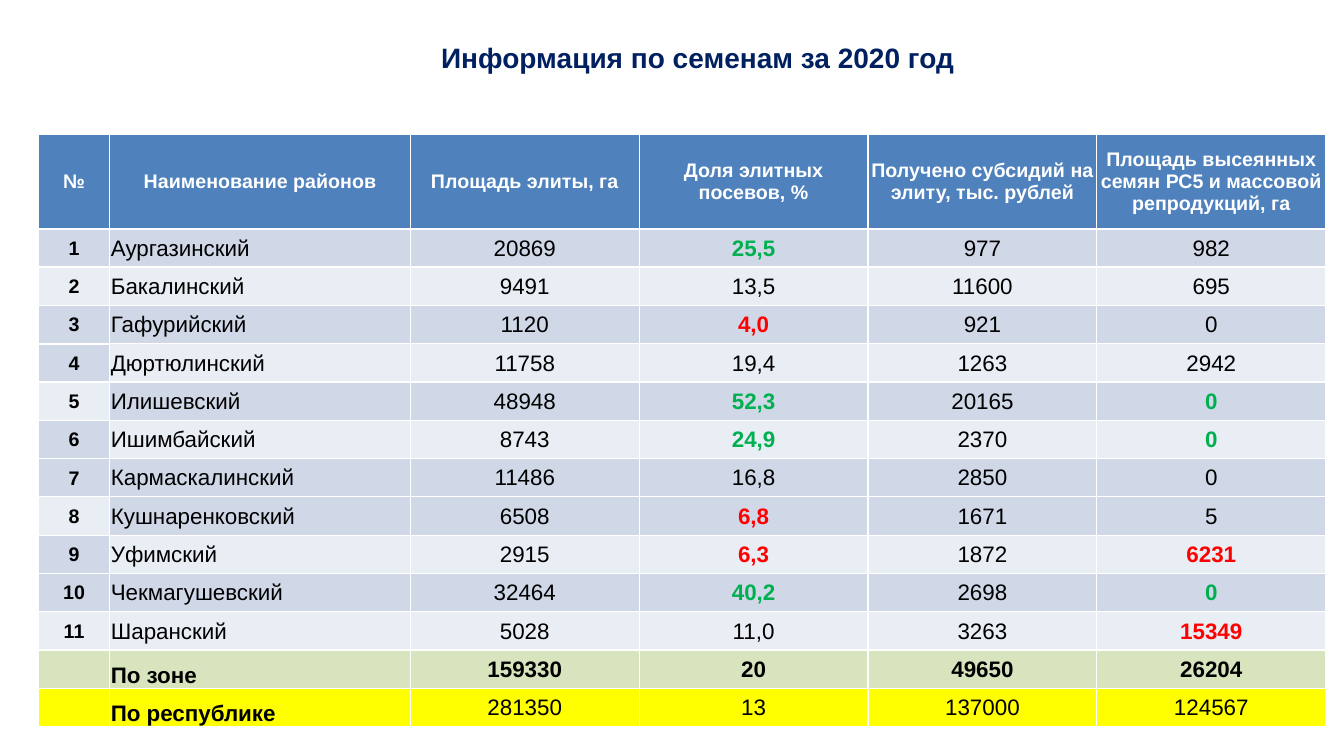
"""Build a slide with a table of seed figures by district for 2020."""
from lxml import etree
from pptx import Presentation
from pptx.dml.color import RGBColor
from pptx.enum.text import MSO_ANCHOR, PP_ALIGN
from pptx.oxml.ns import qn
from pptx.util import Inches, Pt

LEFT, CENTER = PP_ALIGN.LEFT, PP_ALIGN.CENTER
MIDDLE, BOTTOM = MSO_ANCHOR.MIDDLE, MSO_ANCHOR.BOTTOM
WHITE, BLACK, NAVY, BLUE = "FFFFFF", "000000", "002060", "4F81BD"
DARK_BAND, LIGHT_BAND = "D0D8E8", "E9EDF4"
GREEN, RED = "00B050", "FF0000"

HEADERS = [
    "№", "Наименование районов", "Площадь элиты, га", "Доля элитных посевов, %",
    "Получено субсидий на элиту, тыс. рублей",
    "Площадь высеянных семян РС5 и массовой репродукций, га",
]
DISTRICTS = [
    ("Аургазинский", "20869", "25,5", "977", "982"),
    ("Бакалинский", "9491", "13,5", "11600", "695"),
    ("Гафурийский", "1120", "4,0", "921", "0"),
    ("Дюртюлинский", "11758", "19,4", "1263", "2942"),
    ("Илишевский", "48948", "52,3", "20165", "0"),
    ("Ишимбайский", "8743", "24,9", "2370", "0"),
    ("Кармаскалинский", "11486", "16,8", "2850", "0"),
    ("Кушнаренковский", "6508", "6,8", "1671", "5"),
    ("Уфимский", "2915", "6,3", "1872", "6231"),
    ("Чекмагушевский", "32464", "40,2", "2698", "0"),
    ("Шаранский", "5028", "11,0", "3263", "15349"),
]
ZONE = ("", "По зоне", "159330", "20", "49650", "26204")
REPUBLIC = ("", "По республике", "281350", "13", "137000", "124567")
ROWS = [HEADERS]
ROWS += [(str(number), *district) for number, district in enumerate(DISTRICTS, 1)]
ROWS += [ZONE, REPUBLIC]
ZONE_ROW, REPUBLIC_ROW = len(ROWS) - 2, len(ROWS) - 1
TOTAL_FILLS = {ZONE_ROW: "D7E4BD", REPUBLIC_ROW: "FFFF00"}

DARK_NUMBERS = {1, 3, 4, 6, 7, 9, 10}
DARK_ROWS = {1, 3, 5, 7, 8, 10}
THICK_NUMBERS = {3, 6, 9}
MARKS = {(row, 3): GREEN for row in (1, 5, 6, 10)}
MARKS |= {(row, 5): GREEN for row in (5, 6, 10)}
MARKS |= {(row, 3): RED for row in (3, 8, 9)}
MARKS |= {(row, 5): RED for row in (9, 11)}


def rgb(value):
    return RGBColor.from_string(value)


def write(paragraph, text, color, alignment, **formats):
    paragraph.alignment = alignment
    run = paragraph.add_run()
    run.text = text
    run.font.color.rgb = rgb(color)
    for name, value in {"name": "Arial", **formats}.items():
        setattr(run.font, name, value)


presentation = Presentation()
presentation.slide_width = Inches(13.33)
presentation.slide_height = Inches(7.5)
slide = presentation.slides.add_slide(presentation.slide_layouts[6])

title = slide.shapes.add_textbox(Inches(2.42), Inches(0.35), Inches(9), Inches(0.44))
title.text_frame.word_wrap = True
write(title.text_frame.paragraphs[0], "Информация по семенам за 2020 год",
      NAVY, CENTER, size=Pt(20), bold=True)

table = slide.shapes.add_table(
    len(ROWS), len(HEADERS), Inches(0.38), Inches(1.33), Inches(12.77), Inches(5.83)
).table
for index, column in enumerate(table.columns):
    column.width = Inches({0: 0.71, 1: 2.98}.get(index, 2.27))
for index, row in enumerate(table.rows):
    row.height = Inches(0.38 if index else 0.94)

for row_index, values in enumerate(ROWS):
    for column_index, text in enumerate(values):
        cell = table.cell(row_index, column_index)
        is_header, is_total = row_index == 0, row_index in TOTAL_FILLS
        is_number, is_name = column_index == 0, column_index == 1
        mark = MARKS.get((row_index, column_index))

        thick_top = row_index == 1 or is_number and row_index - 1 in THICK_NUMBERS
        thick_bottom = is_header or is_number and row_index in THICK_NUMBERS
        widths = {"a:lnL": 1, "a:lnR": 1, "a:lnT": 1.5 if thick_top else 1,
                  "a:lnB": 1.5 if thick_bottom else 1}
        properties = cell._tc.get_or_add_tcPr()
        for tag, width in widths.items():
            line = etree.SubElement(properties, qn(tag), w=str(Pt(width)))
            solid = etree.SubElement(line, qn("a:solidFill"))
            etree.SubElement(solid, qn("a:srgbClr"), val=WHITE)

        dark_rows = DARK_NUMBERS if is_number else DARK_ROWS
        band = DARK_BAND if row_index in dark_rows else LIGHT_BAND
        cell.fill.solid()
        cell.fill.fore_color.rgb = rgb(BLUE if is_header else TOTAL_FILLS.get(row_index, band))

        cell_format = {
            "margin_left": Inches(0.01), "margin_right": Inches(0.01),
            "margin_top": Inches(0.01), "margin_bottom": 0,
            "vertical_anchor": BOTTOM if is_total and is_name else MIDDLE,
        }
        for name, value in cell_format.items():
            setattr(cell, name, value)
        if text:
            bold = (is_header or is_number or row_index == ZONE_ROW
                    or is_total and is_name or mark is not None)
            write(cell.text_frame.paragraphs[0], text,
                  WHITE if is_header else mark or BLACK,
                  LEFT if is_name and not is_header else CENTER,
                  size=Pt(14 if is_header or is_number else 16), bold=bold)

presentation.save("out.pptx")
